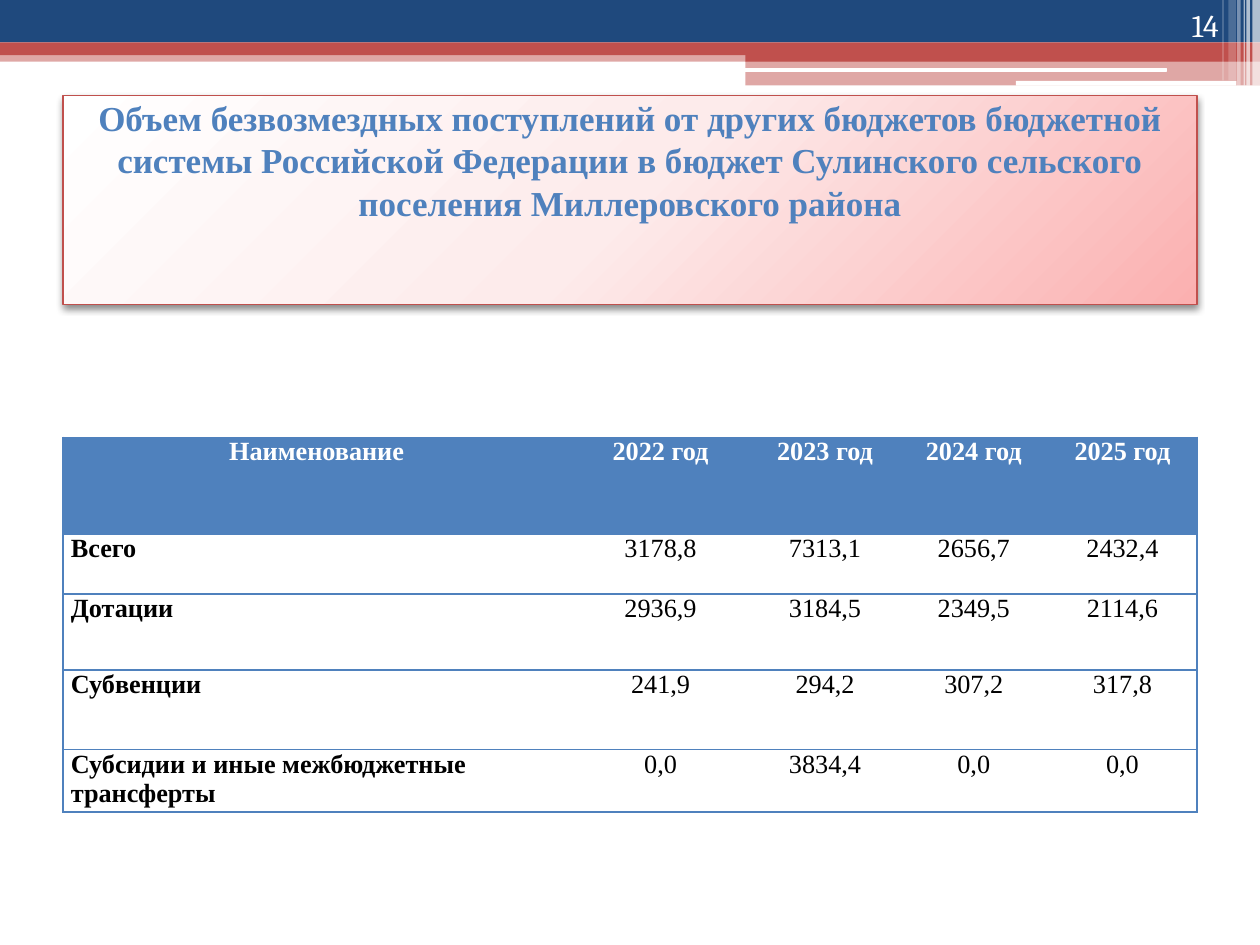
from typing import NamedTuple

from lxml.etree import SubElement
from pptx import Presentation
from pptx.dml.color import RGBColor
from pptx.enum.shapes import MSO_SHAPE as Shape
from pptx.enum.text import MSO_ANCHOR as Anchor, MSO_AUTO_SIZE as AutoSize, PP_ALIGN as Align
from pptx.oxml import parse_xml
from pptx.oxml.ns import nsdecls, qn
from pptx.util import Pt


class Theme(NamedTuple):
    navy: str = "1F497D"
    red: str = "C0504D"
    blue: str = "4F81BD"
    white: str = "FFFFFF"
    black: str = "000000"
    pale_pink: str = "FDEBEB"
    pink: str = "FBB0B0"
    serif: str = "Times New Roman"
    number_font: str = "Cambria"
    title_size: float = 20
    table_size: float = 15
    number_size: float = 18


class Bar(NamedTuple):
    left: float
    top: float
    width: float
    height: float
    color: str
    opacity: int = 100
    preset: Shape = Shape.RECTANGLE


class Row(NamedTuple):
    height: float
    texts: tuple[str, ...]


THEME = Theme()
HEADER_BARS = (
    Bar(0, 28.8, 720, 6.5, THEME.red, 50),
    Bar(0, 0, 720, 24.3, THEME.navy),
    Bar(0, 24.3, 720, 7.2, THEME.red),
    Bar(426, 28, 294, 7.2, THEME.red),
    Bar(426, 35, 294, 13.8, THEME.red, 50),
    Bar(425.6, 38.9, 241.2, 2.2, THEME.white, preset=Shape.ROUNDED_RECTANGLE),
    Bar(580.5, 46.2, 126, 2.7, THEME.white, preset=Shape.ROUNDED_RECTANGLE),
    Bar(715.7, 0, 4.3, 49, THEME.white, 65),
    Bar(712.2, 0, 2, 49, THEME.white, 65),
    Bar(710.7, 0, 0.7, 49, THEME.white, 60),
    Bar(707, 0, 2, 49, THEME.white, 40),
    Bar(702, 0, 4.3, 46, THEME.white, 20),
    Bar(698.5, 0, 0.7, 46, THEME.white, 30),
)
TITLE = ("Объем безвозмездных поступлений от других бюджетов бюджетной системы "
         "Российской Федерации в бюджет Сулинского сельского поселения Миллеровского района")
COLUMN_WIDTHS = (290, 103, 85, 85, 85)
ROWS = (
    Row(55.5, ("Наименование", "2022 год", "2023 год", "2024 год", "2025 год")),
    Row(34, ("Всего", "3178,8", "7313,1", "2656,7", "2432,4")),
    Row(43.5, ("Дотации", "2936,9", "3184,5", "2349,5", "2114,6")),
    Row(45.5, ("Субвенции", "241,9", "294,2", "307,2", "317,8")),
    Row(35.5, ("Субсидии и иные межбюджетные трансферты", "0,0", "3834,4", "0,0", "0,0")),
)


def set_values(target, values: dict) -> None:
    for name, value in values.items():
        setattr(target, name, value)


def write(frame, text: str, align: Align, color: str, **font_values) -> None:
    para = frame.paragraphs[0]
    para.alignment = align
    span = para.add_run()
    span.text = text
    set_values(span.font, font_values)
    span.font.color.rgb = RGBColor.from_string(color)


def draw_bar(slide, bar: Bar) -> None:
    box = slide.shapes.add_shape(bar.preset, *map(Pt, bar[:4]))
    box.shadow.inherit = False
    box.fill.solid()
    box.fill.fore_color.rgb = RGBColor.from_string(bar.color)
    box.line.fill.background()
    if bar.opacity < 100:
        color = box.fill._xPr.find(f"{qn('a:solidFill')}/{qn('a:srgbClr')}")
        SubElement(color, qn("a:alpha"), val=str(bar.opacity * 1000))


def draw_title(slide) -> None:
    """Fill the title placeholder and give it a diagonal gradient and a soft shadow."""
    box = slide.shapes.title
    set_values(box, dict(left=Pt(36), top=Pt(54.7), width=Pt(648), height=Pt(119.5)))
    stops = "".join(
        f'<a:gs pos="{position * 1000}"><a:srgbClr val="{color}"/></a:gs>'
        for position, color in ((0, THEME.white), (50, THEME.pale_pink), (100, THEME.pink)))
    properties = box._element.spPr
    properties.append(parse_xml(
        f'<a:gradFill {nsdecls("a")} rotWithShape="1"><a:gsLst>{stops}</a:gsLst>'
        '<a:lin ang="2700000" scaled="1"/></a:gradFill>'))
    box.line.color.rgb = RGBColor.from_string(THEME.red)
    box.line.width = Pt(0.75)
    properties.append(parse_xml(
        f'<a:effectLst {nsdecls("a")}><a:outerShdw blurRad="50800" dist="25400" dir="5400000">'
        f'<a:srgbClr val="{THEME.black}"><a:alpha val="45000"/></a:srgbClr>'
        '</a:outerShdw></a:effectLst>'))
    frame = box.text_frame
    set_values(frame, dict(word_wrap=True, auto_size=AutoSize.NONE, vertical_anchor=Anchor.TOP,
                           margin_top=Pt(0), margin_bottom=Pt(0)))
    write(frame, TITLE, Align.CENTER, THEME.blue,
          name=THEME.serif, size=Pt(THEME.title_size), bold=True)
    frame.paragraphs[0].line_spacing = Pt(24.3)


def set_borders(cell, visible_sides: str) -> None:
    properties = cell._tc.get_or_add_tcPr()
    for side in "LRTB":
        border = SubElement(properties, qn(f"a:ln{side}"), w=str(Pt(1)))
        if side in visible_sides:
            fill = SubElement(border, qn("a:solidFill"))
            SubElement(fill, qn("a:srgbClr"), val=THEME.blue)
        else:
            SubElement(border, qn("a:noFill"))


def draw_table(slide) -> None:
    last_column = len(COLUMN_WIDTHS) - 1
    height = sum(row.height for row in ROWS)
    table = slide.shapes.add_table(len(ROWS), len(COLUMN_WIDTHS), Pt(36), Pt(250),
                                   Pt(sum(COLUMN_WIDTHS)), Pt(height)).table
    set_values(table, dict(first_row=False, horz_banding=False))
    for column, width in zip(table.columns, COLUMN_WIDTHS):
        column.width = Pt(width)
    for row_index, row in enumerate(ROWS):
        table.rows[row_index].height = Pt(row.height)
        is_header = row_index == 0
        for column_index, text in enumerate(row.texts):
            is_label = column_index == 0
            cell = table.cell(row_index, column_index)
            set_values(cell, dict(margin_left=Pt(4.5), margin_right=Pt(4.5), margin_top=Pt(0),
                                  margin_bottom=Pt(0), vertical_anchor=Anchor.TOP))
            set_borders(cell, "TB" + "L" * is_label + "R" * (column_index == last_column))
            if is_header:
                cell.fill.solid()
                cell.fill.fore_color.rgb = RGBColor.from_string(THEME.blue)
            else:
                cell.fill.background()
            write(cell.text_frame, text,
                  Align.LEFT if is_label and not is_header else Align.CENTER,
                  THEME.white if is_header else THEME.black,
                  name=THEME.serif, size=Pt(THEME.table_size), bold=is_header or is_label)


def draw_page_number(slide, number: str) -> None:
    frame = slide.shapes.add_textbox(Pt(643.7), Pt(0), Pt(59.8), Pt(28.8)).text_frame
    set_values(frame, dict(word_wrap=True, vertical_anchor=Anchor.BOTTOM))
    write(frame, number, Align.RIGHT, THEME.white,
          name=THEME.number_font, size=Pt(THEME.number_size))


def main() -> None:
    deck = Presentation()
    set_values(deck, dict(slide_width=Pt(720), slide_height=Pt(540)))
    slide = deck.slides.add_slide(deck.slide_layouts[5])
    for bar in HEADER_BARS:
        draw_bar(slide, bar)
    draw_title(slide)
    draw_table(slide)
    draw_page_number(slide, "14")
    deck.save("out.pptx")


if __name__ == "__main__":
    main()
